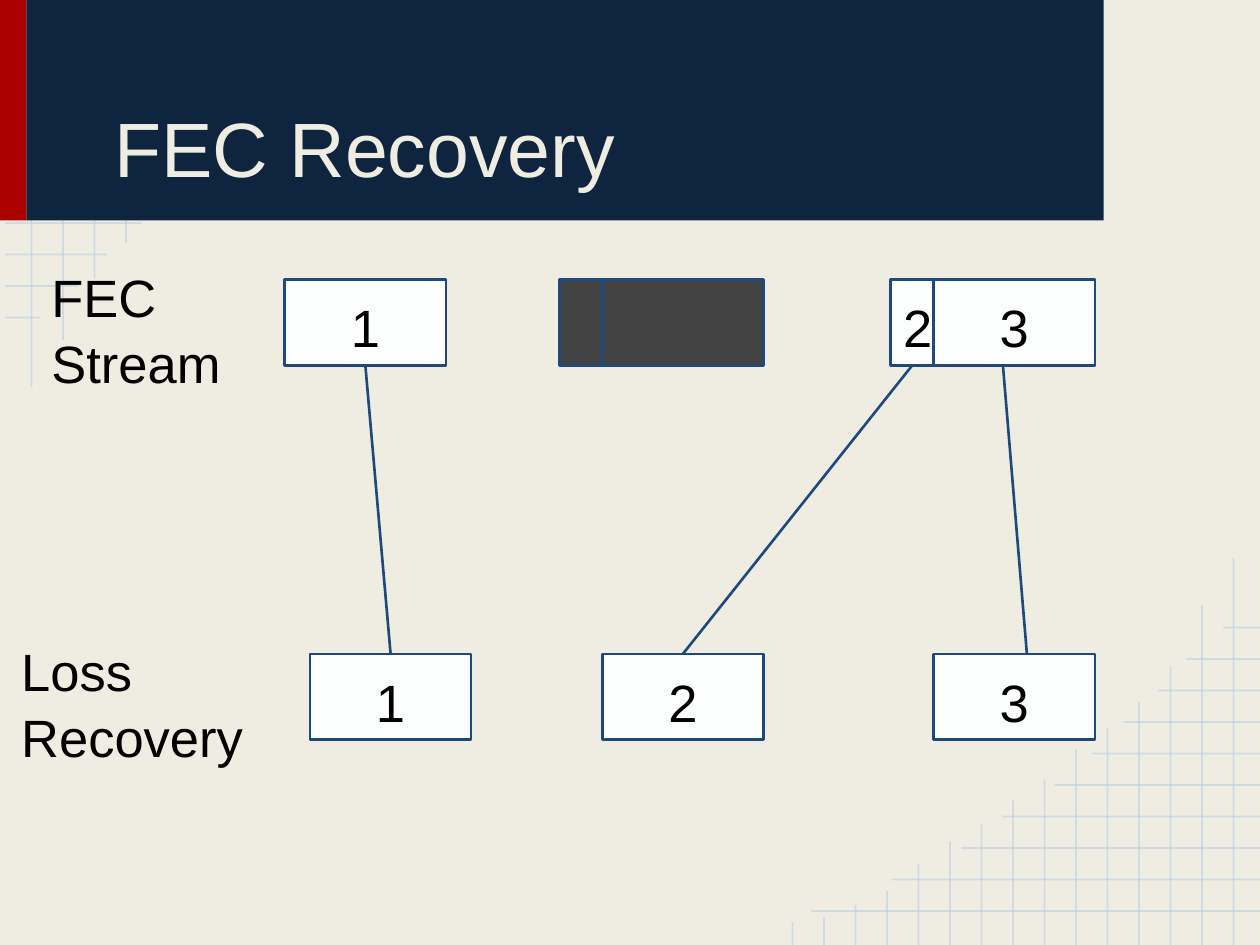
from dataclasses import dataclass

from lxml import etree
from pptx import Presentation
from pptx.dml.color import RGBColor
from pptx.enum import shapes, text
from pptx.oxml import ns
from pptx.util import Inches, Pt


@dataclass(frozen=True)
class Theme:
    background: str = "EFEDE2"
    accent: str = "AB0101"
    banner: str = "0F243E"
    grid: str = "B7CCE4"
    outline: str = "1F497D"
    packet: str = "FDFFFF"
    lost: str = "434343"
    ink: str = "000000"
    font: str = "Arial"
    title_size: int = 44
    body_size: int = 30
    grid_width: float = 1
    outline_width: float = 1.5
    grid_opacity: int = 54


class SlideBuilder:
    def __init__(self, slide, theme):
        self.slide = slide
        self.theme = theme
        slide.background.fill.solid()
        slide.background.fill.fore_color.rgb = RGBColor.from_string(theme.background)

    def set_text(self, shape, words, size, color, align=text.PP_ALIGN.LEFT,
                 anchor=text.MSO_ANCHOR.TOP, spacing=1.0):
        frame = shape.text_frame
        frame.word_wrap = True
        frame.vertical_anchor = anchor
        frame.margin_left = frame.margin_right = Inches(0.1)
        frame.margin_top = frame.margin_bottom = Inches(0.1)
        paragraph = frame.paragraphs[0]
        paragraph.text = words
        paragraph.alignment = align
        paragraph.line_spacing = spacing
        paragraph.font.name = self.theme.font
        paragraph.font.size = Pt(size)
        paragraph.font.color.rgb = RGBColor.from_string(color)
        return paragraph

    def rectangle(self, left, top, width, height, fill, outlined=False):
        shape = self.slide.shapes.add_shape(
            shapes.MSO_SHAPE.RECTANGLE,
            Inches(left), Inches(top), Inches(width), Inches(height))
        shape.shadow.inherit = False
        shape.fill.solid()
        shape.fill.fore_color.rgb = RGBColor.from_string(fill)
        if outlined:
            shape.line.color.rgb = RGBColor.from_string(self.theme.outline)
            shape.line.width = Pt(self.theme.outline_width)
        else:
            shape.line.fill.background()
        return shape

    def packet(self, left, top, width, number=None):
        fill = self.theme.packet if number else self.theme.lost
        shape = self.rectangle(left, top, width, PACKET_HEIGHT, fill, outlined=True)
        if number:
            self.set_text(shape, number, self.theme.body_size, self.theme.ink,
                          text.PP_ALIGN.CENTER, spacing=1.05)
        return shape

    def text_box(self, left, top, width, height, words, size, color, **style):
        box = self.slide.shapes.add_textbox(
            Inches(left), Inches(top), Inches(width), Inches(height))
        return self.set_text(box, words, size, color, **style)

    def line(self, start, end, color, width):
        connector = self.slide.shapes.add_connector(
            shapes.MSO_CONNECTOR.STRAIGHT, *map(Inches, (*start, *end)))
        connector.line.color.rgb = RGBColor.from_string(color)
        connector.line.width = Pt(width)
        etree.SubElement(connector._element.spPr, ns.qn("a:effectLst"))
        return connector

    def grid_line(self, start, end):
        connector = self.line(start, end, self.theme.grid, self.theme.grid_width)
        color = connector._element.spPr.find(".//" + ns.qn("a:srgbClr"))
        alpha = etree.SubElement(color, ns.qn("a:alpha"))
        alpha.set("val", str(self.theme.grid_opacity * 1000))

    def link(self, start, end):
        return self.line(start, end, self.theme.outline, self.theme.outline_width)

    def join(self, upper, lower):
        connector = self.link((0, 0), (1, 1))
        connector.begin_connect(upper, 2)
        connector.end_connect(lower, 0)


GRID_STEP = 0.25
PACKET_WIDTH, PACKET_HEIGHT, REPAIR_WIDTH = 1.28, 0.68, 0.34
STREAM_TOP, RECOVERY_TOP = 2.22, 5.19

# Free ends of the grid lines, in order from each corner
TOP_ROW_ENDS = [3.59, 2.95, 2.41, 2.07, 1.67, 1.37, 1.12, 0.85, 0.62, 0.32]
TOP_COLUMN_ENDS = {0.25: [3.07, 2.7, 2.21, 1.93],
                   2.26: [0.96, 0.82, 0.64, 0.43, 0.32, 0.22, 0.18]}
BOTTOM_ROW_ENDS = [6.44, 7.08, 7.63, 7.96, 8.37, 8.67, 8.92, 9.19, 9.42, 9.71]
BOTTOM_COLUMN_ENDS = [4.43, 4.8, 5.29, 5.57, 5.78, 5.95, 6.19, 6.35,
                      6.54, 6.68, 6.86, 7.07, 7.18, 7.28, 7.32]


def draw_grids(builder):
    for i, end in enumerate(TOP_ROW_ENDS):
        y = 0.27 + i * GRID_STEP
        builder.grid_line((0.04, y), (end, y))
    for first, ends in TOP_COLUMN_ENDS.items():
        for i, end in enumerate(ends):
            x = first + i * GRID_STEP
            builder.grid_line((x, end), (x, 0))
    for i, end in enumerate(BOTTOM_ROW_ENDS):
        y = 7.23 - i * GRID_STEP
        builder.grid_line((10, y), (end, y))
    for i, end in enumerate(BOTTOM_COLUMN_ENDS):
        x = 9.79 - i * GRID_STEP
        builder.grid_line((x, end), (x, 7.5))


def main():
    theme = Theme()
    presentation = Presentation()
    presentation.slide_width, presentation.slide_height = Inches(10), Inches(7.5)
    slide = presentation.slides.add_slide(presentation.slide_layouts[6])
    builder = SlideBuilder(slide, theme)

    # Background grids and title banner
    draw_grids(builder)
    builder.rectangle(0, -0.01, 0.21, 1.76, theme.accent)
    builder.rectangle(0.21, -0.01, 8.55, 1.76, theme.banner)
    title = builder.text_box(0.5, 0.15, 8, 1.48, "FEC Recovery", theme.title_size,
                             theme.background, anchor=text.MSO_ANCHOR.BOTTOM)
    title._p.get_or_add_pPr().set("indent", str(Inches(0.31)))

    # FEC stream: the second packet is lost, the third carries its repair data
    stream_one = builder.packet(2.26, STREAM_TOP, PACKET_WIDTH, "1")
    builder.packet(4.78, STREAM_TOP, PACKET_WIDTH)
    builder.packet(7.41, STREAM_TOP, PACKET_WIDTH, "3")
    builder.packet(4.78 - REPAIR_WIDTH, STREAM_TOP, REPAIR_WIDTH)
    repair_two = builder.packet(7.41 - REPAIR_WIDTH, STREAM_TOP, REPAIR_WIDTH, "2")

    # Recovered packets
    recovered_one, recovered_two, _ = [
        builder.packet(left, RECOVERY_TOP, PACKET_WIDTH, number)
        for left, number in ((2.46, "1"), (4.78, "2"), (7.41, "3"))]

    # Row labels
    for left, top, width, words in ((0.31, 1.98, 1.72, "FEC Stream"),
                                    (0.07, 4.95, 2.19, "Loss Recovery")):
        builder.text_box(left, top, width, 1.16, words, theme.body_size,
                         theme.ink, spacing=1.05)

    # Links from the stream to the recovered packets
    builder.join(repair_two, recovered_two)
    builder.join(stream_one, recovered_one)
    builder.link((7.96, STREAM_TOP + PACKET_HEIGHT), (8.15, RECOVERY_TOP))

    presentation.save("out.pptx")


if __name__ == "__main__":
    main()
